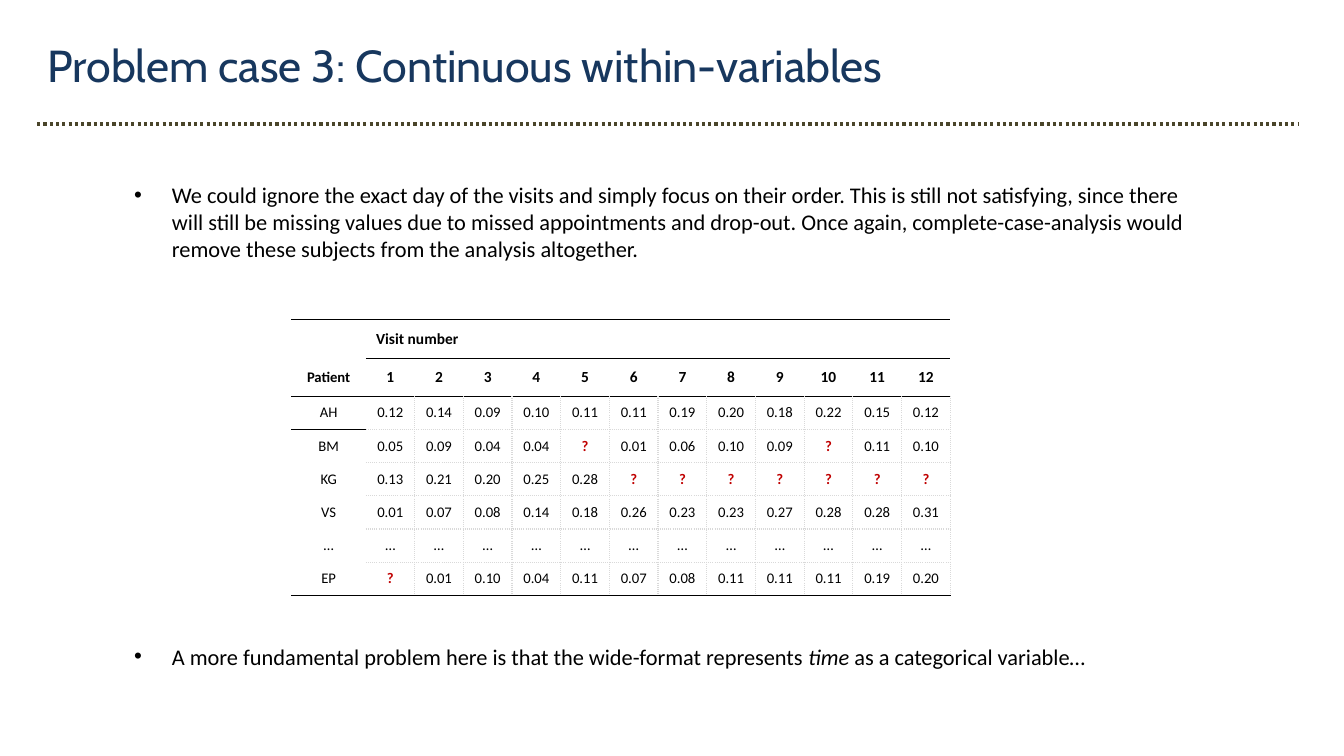
import pptx
import pptx.util
import pptx.dml.color
import pptx.enum.dml
import pptx.enum.shapes
import pptx.enum.text
import pptx.oxml.ns
import lxml.etree

# Content
TITLE = "Problem case 3: Continuous within-variables"
BULLETS = [  # (space before, runs of (text, italic))
    (0, [("We could ignore the exact day of the visits and simply focus on their order. "
          "This is still not satisfying, since there will still be missing values due to "
          "missed appointments and drop-out. Once again, complete-case-analysis would "
          "remove these subjects from the analysis altogether.", False)]),
    (272, [("A more fundamental problem here is that the wide-format represents ", False),
           ("time ", True), ("as a categorical variable…", False)]),
]
VISITS = 12
PATIENTS = [
    "AH 0.12 0.14 0.09 0.10 0.11 0.11 0.19 0.20 0.18 0.22 0.15 0.12",
    "BM 0.05 0.09 0.04 0.04 ? 0.01 0.06 0.10 0.09 ? 0.11 0.10",
    "KG 0.13 0.21 0.20 0.25 0.28 ? ? ? ? ? ? ?",
    "VS 0.01 0.07 0.08 0.14 0.18 0.26 0.23 0.23 0.27 0.28 0.28 0.31",
    "… … … … … … … … … … … … …",
    "EP ? 0.01 0.10 0.04 0.11 0.07 0.08 0.11 0.11 0.11 0.19 0.20",
]
ROWS = [["", "Visit number"] + [""] * (VISITS - 1),
        ["Patient"] + [str(visit + 1) for visit in range(VISITS)]]
ROWS += [line.split() for line in PATIENTS]

COLORS = {"title": "17375E", "text": "000000", "rule": "4A452A",
          "missing": "C00000", "grid": "D9D9D9"}
HEADER_ROWS = 2
HEADER_HEIGHT, ROW_HEIGHT = 27.4, 23.7
NAME_WIDTH, VISIT_WIDTH = 53.3, 34.8
NO_STYLE = "{2D5ABB26-0587-4C30-8999-92F81FD0307C}"
BLACK, THIN, DOTTED = ("text", 1, "solid"), ("text", 0.5, "solid"), ("grid", 1, "sysDot")

Pt = pptx.util.Pt


def color(name):
    return pptx.dml.color.RGBColor.from_string(COLORS[name])


def place(shape, left, top, width, height):
    shape.left, shape.top = Pt(left), Pt(top)
    shape.width, shape.height = Pt(width), Pt(height)


def style(font, name, size, color_name, bold=False):
    font.name, font.size, font.bold = name, Pt(size), bold
    font.color.rgb = color(color_name)


def line_above(row, column):
    """Border above a cell; row len(ROWS) is the foot of the table."""
    if row in (0, HEADER_ROWS, len(ROWS)):
        return BLACK
    if column == 0:
        return BLACK if row == HEADER_ROWS + 1 else None
    return THIN if row == 1 else DOTTED


def line_left(row, column):
    return DOTTED if row >= HEADER_ROWS and column > 1 else None


def set_borders(cell, row, column):
    properties = cell._tc.get_or_add_tcPr()
    borders = [("a:lnL", line_left(row, column)), ("a:lnR", line_left(row, column + 1)),
               ("a:lnT", line_above(row, column)), ("a:lnB", line_above(row + 1, column))]
    for position, (tag, border) in enumerate(borders):
        line = lxml.etree.Element(pptx.oxml.ns.qn(tag))
        properties.insert(position, line)
        if border is None:
            lxml.etree.SubElement(line, pptx.oxml.ns.qn("a:noFill"))
            continue
        color_name, width, dash = border
        line.set("w", str(int(Pt(width))))
        fill = lxml.etree.SubElement(line, pptx.oxml.ns.qn("a:solidFill"))
        lxml.etree.SubElement(fill, pptx.oxml.ns.qn("a:srgbClr"), val=COLORS[color_name])
        lxml.etree.SubElement(line, pptx.oxml.ns.qn("a:prstDash"), val=dash)


def add_title(slide):
    title = slide.shapes.title
    place(title, 26.6, 23, 838.8, 46.1)
    title.text_frame.text = TITLE
    title.text_frame.auto_size = pptx.enum.text.MSO_AUTO_SIZE.NONE
    paragraph = title.text_frame.paragraphs[0]
    paragraph.alignment = pptx.enum.text.PP_ALIGN.LEFT
    style(paragraph.font, "Cabin", 32, "title")


def add_rule(slide):
    rule = slide.shapes.add_connector(pptx.enum.shapes.MSO_CONNECTOR.STRAIGHT,
                                      Pt(26.6), Pt(88.6), Pt(928.1), Pt(88.6))
    rule.line.color.rgb = color("rule")
    rule.line.width = Pt(2.25)
    rule.line.dash_style = pptx.enum.dml.MSO_LINE.ROUND_DOT
    lxml.etree.SubElement(rule._element.spPr, pptx.oxml.ns.qn("a:effectLst"))


def add_bullets(slide):
    body = slide.placeholders[1]
    place(body, 88.6, 126, 771.1, 388.1)
    frame = body.text_frame
    frame.auto_size = pptx.enum.text.MSO_AUTO_SIZE.NONE
    for index, (space_before, runs) in enumerate(BULLETS):
        paragraph = frame.paragraphs[0] if index == 0 else frame.add_paragraph()
        paragraph.space_before = Pt(space_before)
        style(paragraph.font, "Calibri", 16, "text")
        properties = paragraph._p.get_or_add_pPr()
        properties.set("marL", str(int(Pt(27))))
        properties.set("indent", str(int(Pt(-27))))
        for text, italic in runs:
            run = paragraph.add_run()
            run.text = text
            if italic:
                run.font.italic = True


def add_visit_table(slide):
    heights = [HEADER_HEIGHT if row < HEADER_ROWS else ROW_HEIGHT for row in range(len(ROWS))]
    widths = [NAME_WIDTH] + [VISIT_WIDTH] * VISITS
    table = slide.shapes.add_table(len(ROWS), len(widths), Pt(208.1), Pt(228.3),
                                   Pt(sum(widths)), Pt(sum(heights))).table
    table.first_row = table.horz_banding = False
    table._tbl.tblPr.find(pptx.oxml.ns.qn("a:tableStyleId")).text = NO_STYLE
    for column, width in enumerate(widths):
        table.columns[column].width = Pt(width)
    for row, texts in enumerate(ROWS):
        table.rows[row].height = Pt(heights[row])
        for column, text in enumerate(texts):
            cell = table.cell(row, column)
            cell.text = text
            cell.vertical_anchor = pptx.enum.text.MSO_ANCHOR.MIDDLE
            cell.fill.background()
            set_borders(cell, row, column)
            paragraph = cell.text_frame.paragraphs[0]
            if row > 0:
                paragraph.alignment = pptx.enum.text.PP_ALIGN.CENTER
            header, missing = row < HEADER_ROWS, text == "?"
            style(paragraph.font, "Calibri", 11 if header and column > 0 else 10.5,
                  "missing" if missing else "text", header or missing)
    table.cell(0, 1).merge(table.cell(0, VISITS))


def main():
    presentation = pptx.Presentation()
    presentation.slide_width, presentation.slide_height = Pt(960), Pt(540)
    slide = presentation.slides.add_slide(presentation.slide_layouts[1])
    add_title(slide)
    add_bullets(slide)
    add_rule(slide)
    add_visit_table(slide)
    presentation.save("out.pptx")


if __name__ == "__main__":
    main()
